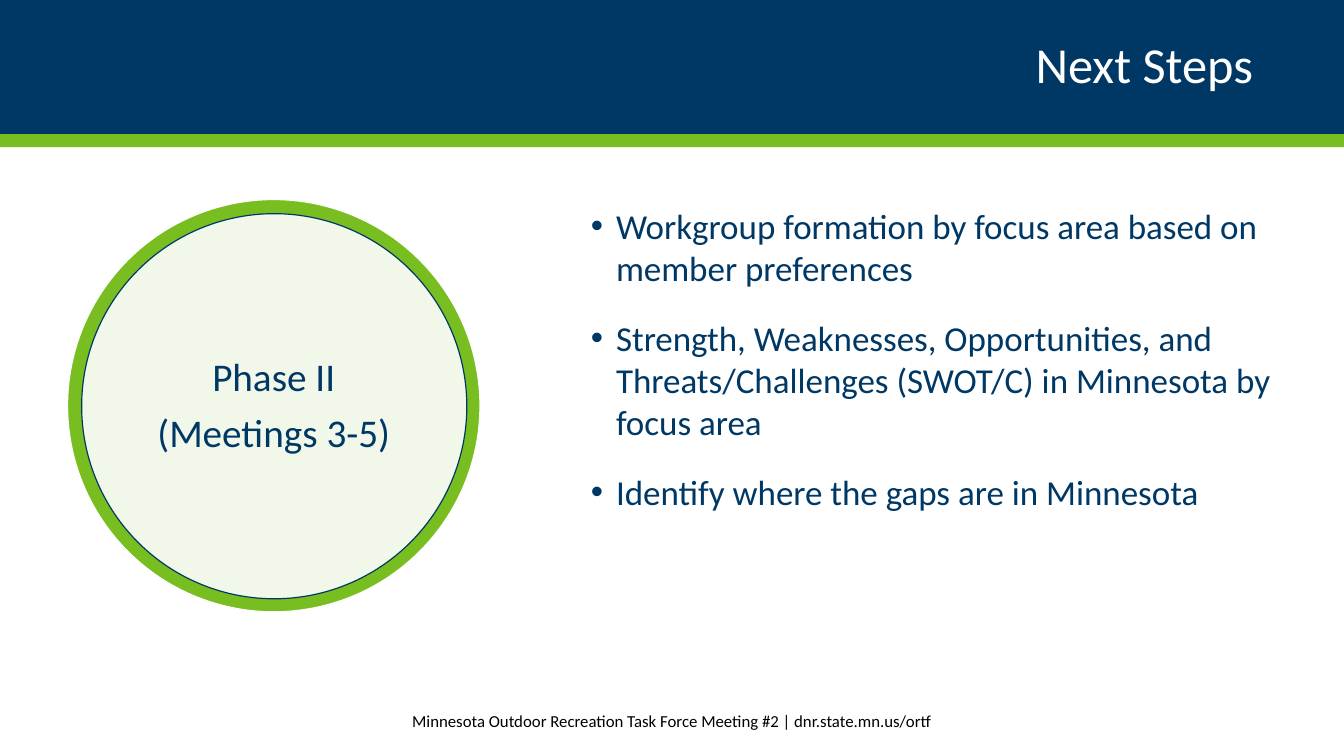
from lxml import etree
from pptx import Presentation
from pptx.dml.color import RGBColor
from pptx.enum.shapes import MSO_SHAPE
from pptx.enum.text import MSO_ANCHOR, MSO_AUTO_SIZE, PP_ALIGN
from pptx.oxml.ns import qn
from pptx.util import Inches, Pt

RECT, OVAL = MSO_SHAPE.RECTANGLE, MSO_SHAPE.OVAL
MIDDLE, FIXED = MSO_ANCHOR.MIDDLE, MSO_AUTO_SIZE.NONE
CENTER, RIGHT = PP_ALIGN.CENTER, PP_ALIGN.RIGHT
NAVY, GREEN, WHITE, BLACK = "003865", "78BE21", "FFFFFF", "000000"


def paint(target, color):
    """Give a fill or line format a solid colour."""
    target.solid()
    target.fore_color.rgb = RGBColor.from_string(color)


def write(frame, lines, size, color, align=None):
    """Write one paragraph per line and return the paragraphs."""
    frame.word_wrap = True
    frame.auto_size = FIXED
    frame.text = "\n".join(lines)
    for para in frame.paragraphs:
        para.alignment = align
        para.font.name = "Calibri"
        para.font.size = Pt(size)
        paint(para.font.fill, color)
    return frame.paragraphs


deck = Presentation()
deck.slide_width, deck.slide_height = Inches(13.33), Inches(7.5)
slide = deck.slides.add_slide(deck.slide_layouts[1])
title, body = slide.placeholders

# Title band
title.left, title.top = 0, 0
title.width, title.height = deck.slide_width, Inches(1.33)
paint(title.fill, NAVY)
frame = title.text_frame
frame.margin_left = frame.margin_right = Inches(0.9)
frame.vertical_anchor = MIDDLE
write(frame, ["Next Steps"], 36, WHITE, RIGHT)[0].line_spacing = 0.9

# Green rule under the title
rule = slide.shapes.add_shape(RECT, 0, Inches(1.33), deck.slide_width, Inches(0.13))
rule.shadow.inherit = False
paint(rule.fill, GREEN)
rule.line.fill.background()

# Phase circle: green ring, then a mostly opaque white disc
badge = slide.shapes.add_group_shape()
for left, top, side, fill, edge in [
    (0.67, 1.98, 4.09, GREEN, WHITE),
    (0.81, 2.12, 3.82, WHITE, NAVY),
]:
    disc = badge.shapes.add_shape(
        OVAL, Inches(left), Inches(top), Inches(side), Inches(side))
    disc.shadow.inherit = False
    paint(disc.fill, fill)
    paint(disc.line.fill, edge)
    disc.line.width = Pt(0.85)
tint = disc.fill._xPr.find(qn("a:solidFill"))[0]
etree.SubElement(tint, qn("a:alpha"), val="90000")

label = badge.shapes.add_textbox(
    Inches(1.35), Inches(2.67), Inches(2.73), Inches(2.73))
frame = label.text_frame
frame.margin_left = frame.margin_right = Inches(0.04)
frame.margin_top = frame.margin_bottom = Inches(0.04)
frame.vertical_anchor = MIDDLE
for para in write(frame, ["Phase II", "(Meetings 3-5)"], 28, NAVY, CENTER):
    para.line_spacing = 0.9
    para.space_after = Pt(10)

# Bulleted steps
body.left, body.top = Inches(5.76), Inches(1.98)
body.width, body.height = Inches(7.06), Inches(4.76)
steps = [
    "Workgroup formation by focus area based on member preferences",
    "Strength, Weaknesses, Opportunities, and Threats/Challenges (SWOT/C) "
    "in Minnesota by focus area",
    "Identify where the gaps are in Minnesota",
]
for para in write(body.text_frame, steps, 25, NAVY):
    para.space_before = para.space_after = Pt(10)
    props = para._p.get_or_add_pPr()
    props.set("marL", str(Inches(0.25)))
    props.set("indent", str(-Inches(0.25)))
    # Bullet marks go ahead of the default run properties
    mark = etree.Element(qn("a:buChar"), char="•")
    props.find(qn("a:defRPr")).addprevious(mark)

# Footer
foot = slide.shapes.add_textbox(
    Inches(3.61), Inches(6.95), Inches(6.11), Inches(0.4))
foot.text_frame.vertical_anchor = MIDDLE
credit = "Minnesota Outdoor Recreation Task Force Meeting #2 | dnr.state.mn.us/ortf"
write(foot.text_frame, [credit], 12, BLACK, CENTER)

deck.save("out.pptx")
